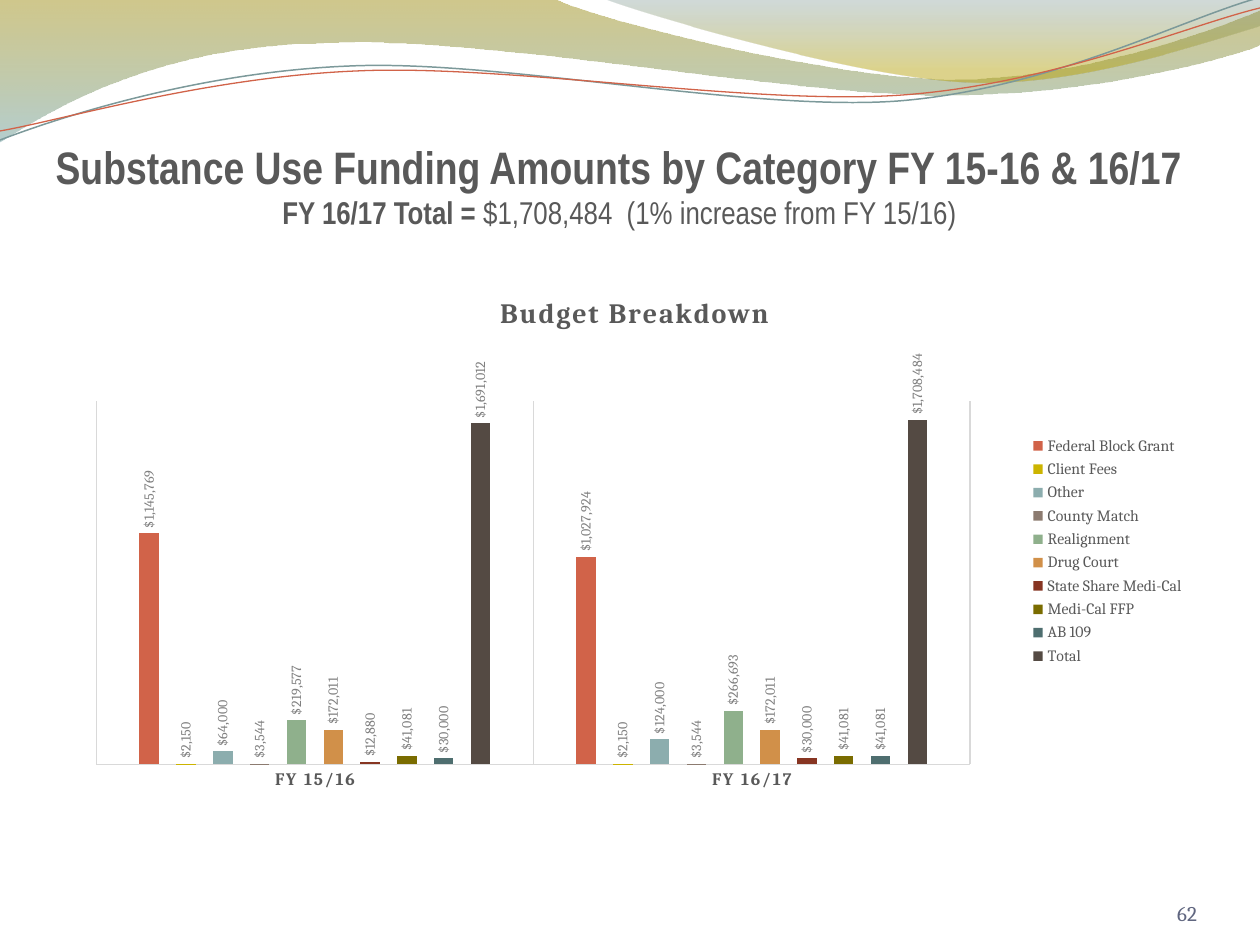
from lxml.etree import SubElement
from pptx import Presentation
from pptx.chart.data import CategoryChartData
from pptx.dml.color import RGBColor
from pptx.enum.chart import XL_CHART_TYPE, XL_LABEL_POSITION, XL_LEGEND_POSITION, XL_TICK_MARK
from pptx.enum.text import MSO_ANCHOR, MSO_AUTO_SIZE, PP_ALIGN
from pptx.oxml.ns import qn
from pptx.util import Emu, Pt

PX = 914400 / 126
GREY = "595959"
DOLLARS = '"$"#,##0_);[Red]\\("$"#,##0\\)'
hex_color = RGBColor.from_string

deck = Presentation()
deck.slide_width, deck.slide_height = Emu(round(1260 * PX)), Emu(round(945 * PX))
slide = deck.slides.add_slide(deck.slide_layouts[5])


def draw_curve(start, segments, close=False):
    """Draw an outline in px from straight edges (x, y) and Bezier curves (three x, y pairs)."""
    points = [(segment[i], segment[i + 1]) for segment in segments for i in range(0, len(segment), 2)]
    builder = slide.shapes.build_freeform(*start, scale=1 / PX and PX)
    builder.add_line_segments(points, close=close)
    outline = builder.convert_to_shape()
    outline.shadow.inherit = False
    edges = iter(list(outline._element.iter(qn("a:lnTo"))))
    for segment in segments:
        edge = next(edges)
        if len(segment) == 6:
            edge.tag = qn("a:cubicBezTo")
            for _ in range(2):
                control = next(edges)
                edge.append(control[0])
                control.getparent().remove(control)
    return outline


def set_layout(parent, index, **fractions):
    """Place a chart part by hand, in fractions of the chart."""
    for old in parent.findall(qn("c:layout")):
        parent.remove(old)
    layout = SubElement(parent, qn("c:layout"))
    parent.insert(index, layout)
    manual = SubElement(layout, qn("c:manualLayout"))
    if "w" in fractions:
        SubElement(manual, qn("c:layoutTarget"), val="inner")
    for side in "xy":
        SubElement(manual, qn(f"c:{side}Mode"), val="edge")
    for side, value in fractions.items():
        SubElement(manual, qn(f"c:{side}"), val=str(value))


# Bands and lines across the top
bands = [
    ((0, 0), [(554, -1), (600, 21, 837, 79, 955, 79), (1075, 79, 1207, 33, 1260, 11), (1261, 45),
              (1239, 55, 1096, 96, 940, 95), (784, 95, 481, 35, 324, 43),
              (163, 45, 58, 105, -1, 142)],
     [(0, "978500", 45), (1, "77A5A6", 55)]),
    ((604, -1), [(641, 14, 859, 78, 969, 82), (1079, 87, 1211, 40, 1260, 26), (1260, 0)],
     [(0, "648484", 30), (0.8, "B49F00", 45)]),
]
for start, segments, stops in bands:
    band = draw_curve(start, segments, close=True)
    band.line.fill.background()
    band.fill.gradient()
    band.fill.gradient_angle = 270
    for stop, (position, color, _) in zip(band.fill.gradient_stops, stops):
        stop.position = position
        stop.color.rgb = hex_color(color)
    for color_element, (_, _, opacity) in zip(band._element.spPr.iter(qn("a:srgbClr")), stops):
        SubElement(color_element, qn("a:alpha"), val=str(opacity * 1000))

strands = [
    ((0, 140), [(60, 117, 199, 72, 349, 66), (498, 59, 747, 112, 898, 101),
                (1050, 89, 1182, 19, 1258, -2)], "7C999A", 0.85),
    ((0, 131), [(59, 121, 207, 77, 357, 71), (508, 64, 752, 106, 903, 95),
                (1053, 84, 1186, 26, 1260, 8)], "D16349", 0.75),
]
for start, segments, color, width in strands:
    strand = draw_curve(start, segments)
    strand.fill.background()
    strand.line.color.rgb = hex_color(color)
    strand.line.width = Pt(width)

# Title and page number
title = slide.shapes.title
title.left, title.top, title.width, title.height = [Emu(round(v * PX)) for v in (42, 126, 1155, 105)]
page_number = slide.shapes.add_textbox(*[Emu(round(v * PX)) for v in (1092, 876, 105, 50)])
for box, inset, alignment in [(title, 6, PP_ALIGN.CENTER), (page_number, 0, PP_ALIGN.RIGHT)]:
    frame = box.text_frame
    frame.word_wrap = True
    frame.auto_size = MSO_AUTO_SIZE.NONE
    frame.vertical_anchor = MSO_ANCHOR.BOTTOM
    frame.margin_left = frame.margin_right = frame.margin_bottom = 0
    frame.margin_top = Emu(round(inset * PX))
    frame.paragraphs[0].alignment = alignment

heading = title.text_frame.paragraphs[0]
folio = page_number.text_frame.paragraphs[0]
for paragraph, text, size, bold, name, color in [
    (heading, "Substance Use Funding Amounts by Category FY 15-16 & 16/17", 26, True, "Arial Narrow", GREY),
    (heading, "FY 16/17 Total = ", 18, True, "Arial Narrow", GREY),
    (heading, "$1,708,484  (1% increase from FY 15/16)", 18, False, "Arial Narrow", GREY),
    (folio, "62", 12, False, "Cambria", "606680"),
]:
    run = paragraph.add_run()
    run.text = text
    run.font.size, run.font.bold, run.font.name = Pt(size), bold, name
    run.font.color.rgb = hex_color(color)
    if size == 26:
        paragraph.add_line_break()

# Budget chart
budget = [
    ("Federal Block Grant", (1145769, 1027924), "D16349"),
    ("Client Fees", (2150, 2150), "CCB400"),
    ("Other", (64000, 124000), "8CADAE"),
    ("County Match", (3544, 3544), "8C7B70"),
    ("Realignment", (219577, 266693), "8FB08C"),
    ("Drug Court", (172011, 172011), "D19049"),
    ("State Share Medi-Cal", (12880, 30000), "873522"),
    ("Medi-Cal FFP", (41081, 41081), "7A6C00"),
    ("AB 109", (30000, 41081), "4E6E6F"),
    ("Total", (1691012, 1708484), "544A43"),
]
data = CategoryChartData(number_format=DOLLARS)
data.categories = ["FY 15/16", "FY 16/17"]
for name, amounts, _ in budget:
    data.add_series(name, amounts)
chart = slide.shapes.add_chart(
    XL_CHART_TYPE.COLUMN_CLUSTERED, *[Emu(round(v * PX)) for v in (74, 273, 1123, 556)], data).chart
chart.font.name, chart.font.size = "Cambria", Pt(10)

chart.has_title = True
chart_heading = chart.chart_title.text_frame.paragraphs[0].add_run()
chart_heading.text = "Budget Breakdown"
chart.chart_title.include_in_layout = False
set_layout(chart.chart_title._element, 1, x=0.375, y=0.03)

chart.has_legend = True
chart.legend.position = XL_LEGEND_POSITION.RIGHT
chart.legend.include_in_layout = False

years, amounts_axis = chart.category_axis, chart.value_axis
years.major_tick_mark = XL_TICK_MARK.NONE
years.has_major_gridlines = True
for line in (years.format.line, years.major_gridlines.format.line):
    line.color.rgb = hex_color("D9D9D9")
    line.width = Pt(0.75)
amounts_axis.visible = False
amounts_axis.has_major_gridlines = False
amounts_axis.minimum_scale, amounts_axis.maximum_scale = 0, 1800000

plot = chart.plots[0]
plot.gap_width, plot.overlap = 444, -90
plot.vary_by_categories = False
set_layout(chart._chartSpace.chart.plotArea, 0, x=0.02, y=0.231, w=0.778, h=0.653)

chart_fonts = [(chart_heading.font, 16, True, GREY), (years.tick_labels.font, 10, True, GREY),
               (chart.legend.font, 9, False, GREY)]
for series, (_, _, color) in zip(plot.series, budget):
    series.format.fill.solid()
    series.format.fill.fore_color.rgb = hex_color(color)
    series.invert_if_negative = False
    labels = series.data_labels
    labels.show_value = True
    labels.position = XL_LABEL_POSITION.OUTSIDE_END
    labels.number_format, labels.number_format_is_linked = DOLLARS, False
    chart_fonts.append((labels.font, 8, False, "808080"))
    turned = labels._element.find(qn("c:txPr")).find(qn("a:bodyPr"))
    turned.set("rot", "-5400000")
    turned.set("vert", "horz")

for font, size, bold, color in chart_fonts:
    font.name, font.size, font.bold = "Cambria", Pt(size), bold
    font.color.rgb = hex_color(color)
    if bold:
        font._element.set("spc", "120")

deck.save("out.pptx")
